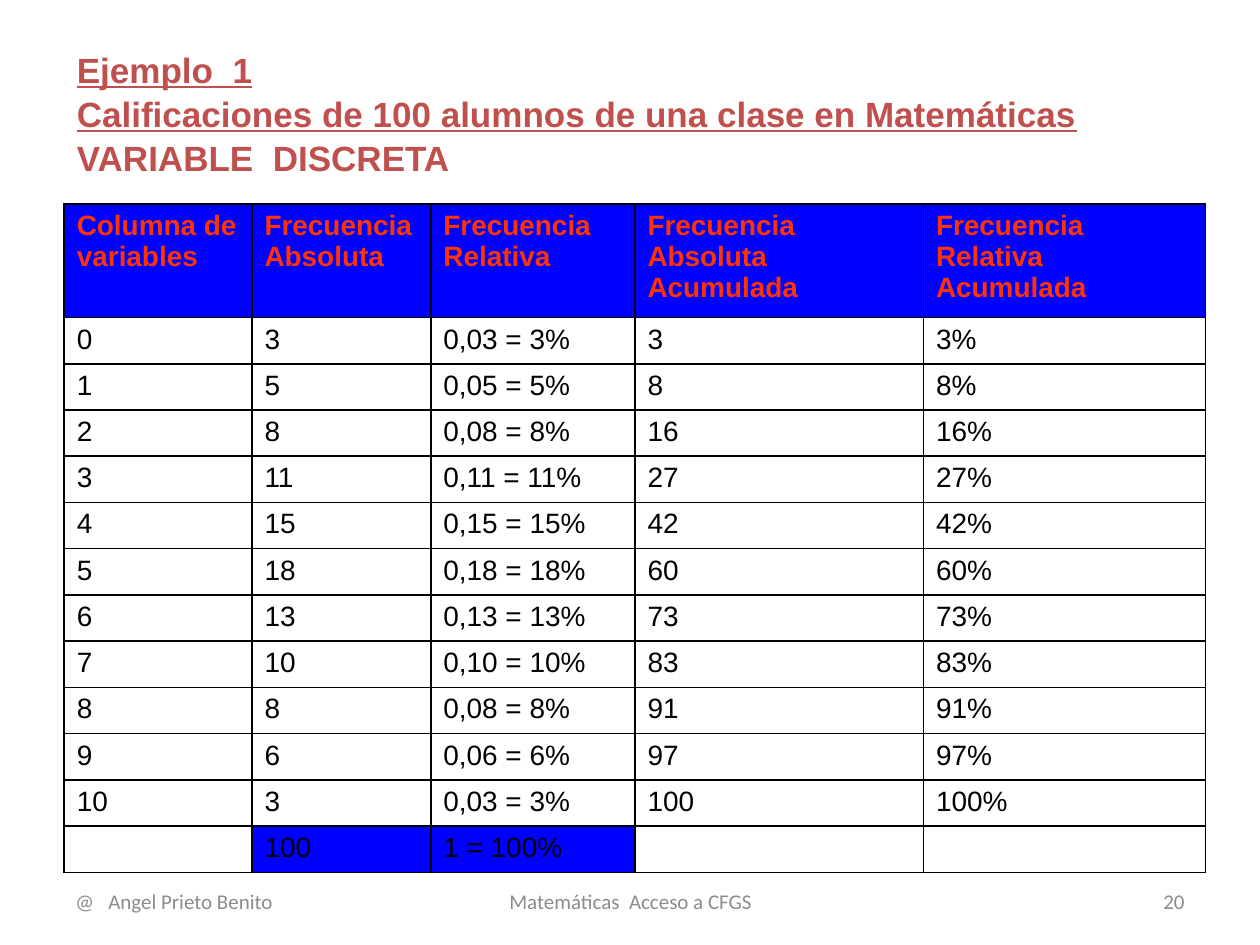
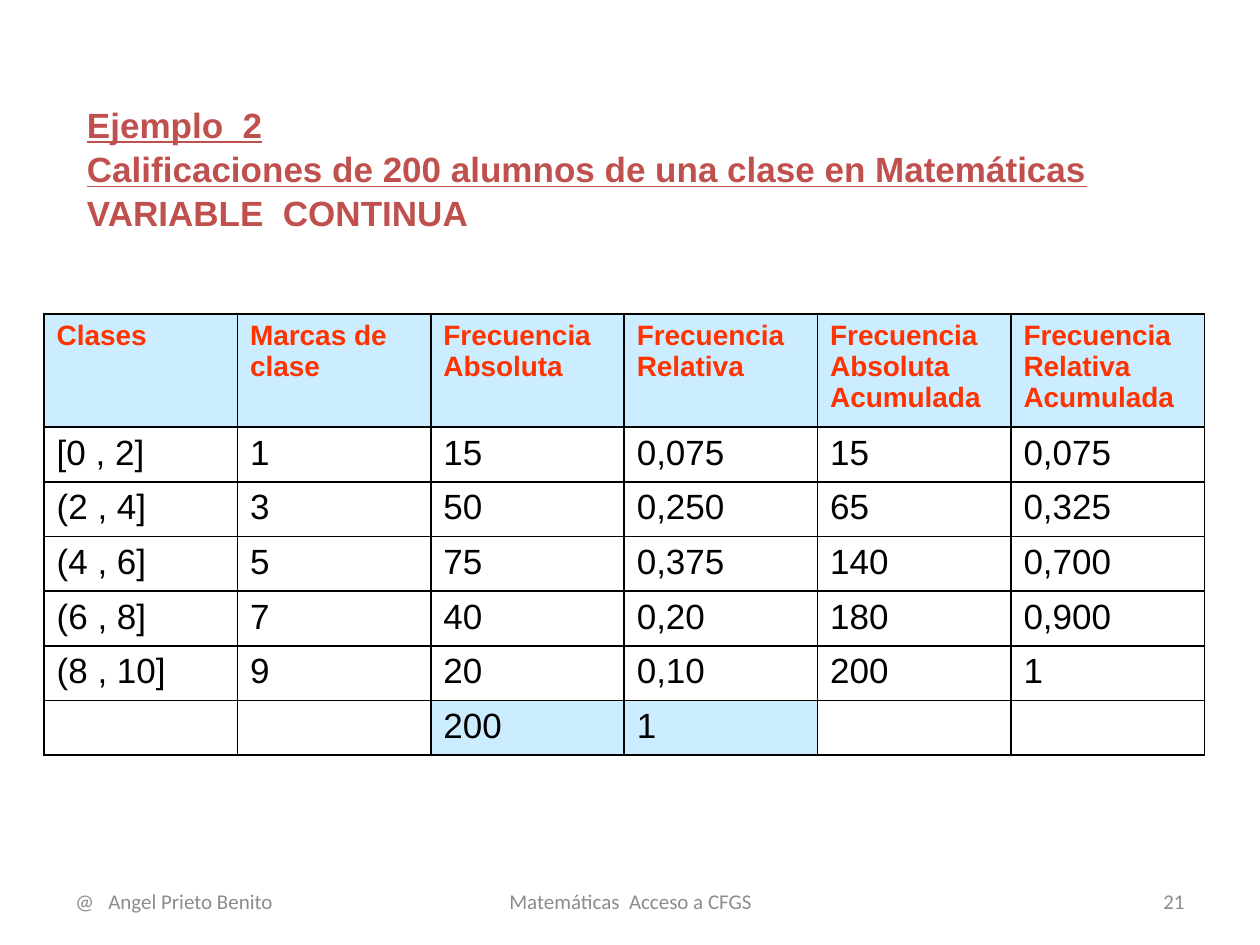
"""Builds two slides with frequency tables for a discrete and a continuous variable."""
import lxml.etree
import pptx
import pptx.dml.color
import pptx.enum.text
import pptx.oxml.ns
import pptx.util

Inches = pptx.util.Inches
Pt = pptx.util.Pt
Align = pptx.enum.text.PP_ALIGN
Anchor = pptx.enum.text.MSO_ANCHOR
AutoSize = pptx.enum.text.MSO_AUTO_SIZE
qn = pptx.oxml.ns.qn

COLORS = {
    "title": "C0504D", "footer": "8C8C8C", "header": "FF3300",
    "body": "000000", "border": "000000", "blue": "0000FF", "sky": "CCECFF",
}
TITLE_FORMAT = {"name": "Arial", "size": Pt(20), "bold": True}
FOOTER_FORMAT = {"name": "Calibri", "size": Pt(12)}
HEADER_FORMAT = {"name": "Arial", "size": Pt(16), "bold": True}
HEADER_HEIGHT = 0.9
FREQUENCIES = ["Frecuencia Absoluta", "Frecuencia Relativa",
               "Frecuencia Absoluta Acumulada", "Frecuencia Relativa Acumulada"]

EXAMPLES = [
    {
        "number": "20",
        "title": ["Ejemplo_1", "Calificaciones de 100 alumnos de una clase en Matemáticas",
                  "VARIABLE  DISCRETA"],
        "title_box": (0.51, 0.34, 8.98, 1.1),
        "table_box": (0.51, 1.62, 9.06, 5.3),
        "columns": [1.49, 1.42, 1.62, 2.29, 2.24],
        "accent": "blue",
        "body_size": 16,
        "rows": [
            ["Columna de variables"] + FREQUENCIES,
            ["0", "3", "0,03 = 3%", "3", "3%"],
            ["1", "5", "0,05 = 5%", "8", "8%"],
            ["2", "8", "0,08 = 8%", "16", "16%"],
            ["3", "11", "0,11 = 11%", "27", "27%"],
            ["4", "15", "0,15 = 15%", "42", "42%"],
            ["5", "18", "0,18 = 18%", "60", "60%"],
            ["6", "13", "0,13 = 13%", "73", "73%"],
            ["7", "10", "0,10 = 10%", "83", "83%"],
            ["8", "8", "0,08 = 8%", "91", "91%"],
            ["9", "6", "0,06 = 6%", "97", "97%"],
            ["10", "3", "0,03 = 3%", "100", "100%"],
            ["", "100", "1 = 100%", "", ""],
        ],
    },
    {
        "number": "21",
        "title": ["Ejemplo_2", "Calificaciones de 200 alumnos de una clase en Matemáticas",
                  "VARIABLE  CONTINUA"],
        "title_box": (0.59, 0.78, 8.82, 1.1),
        "table_box": (0.35, 2.49, 9.21, 3.5),
        "columns": [9.21 / 6] * 6,
        "accent": "sky",
        "body_size": 20,
        "rows": [
            ["Clases", "Marcas de clase"] + FREQUENCIES,
            ["[0 , 2]", "1", "15", "0,075", "15", "0,075"],
            ["(2 , 4]", "3", "50", "0,250", "65", "0,325"],
            ["(4 , 6]", "5", "75", "0,375", "140", "0,700"],
            ["(6 , 8]", "7", "40", "0,20", "180", "0,900"],
            ["(8 , 10]", "9", "20", "0,10", "200", "1"],
            ["", "", "200", "1", "", ""],
        ],
    },
]


def write(paragraph, text, color, format_values):
    run = paragraph.add_run()
    run.text = text
    for attribute, value in format_values.items():
        setattr(run.font, attribute, value)
    run.font.color.rgb = pptx.dml.color.RGBColor.from_string(COLORS[color])


def add_borders(cell):
    properties = cell._tc.get_or_add_tcPr()
    for side in ("lnL", "lnR", "lnT", "lnB"):
        line = lxml.etree.SubElement(properties, qn(f"a:{side}"), w=str(Pt(1)))
        fill = lxml.etree.SubElement(line, qn("a:solidFill"))
        lxml.etree.SubElement(fill, qn("a:srgbClr"), val=COLORS["border"])


presentation = pptx.Presentation()
presentation.slide_width = Inches(10)
presentation.slide_height = Inches(7.5)
title_only = presentation.slide_layouts[5]

for example in EXAMPLES:
    slide = presentation.slides.add_slide(title_only)

    footers = [
        (0.5, 2.33, "@   Angel Prieto Benito", Align.LEFT),
        (3.42, 3.17, "Matemáticas  Acceso a CFGS", Align.CENTER),
        (7.17, 2.33, example["number"], Align.RIGHT),
    ]
    for left, width, text, alignment in footers:
        shape = slide.shapes.add_textbox(Inches(left), Inches(6.95), Inches(width), Inches(0.4))
        shape.text_frame.word_wrap = True
        shape.text_frame.vertical_anchor = Anchor.MIDDLE
        paragraph = shape.text_frame.paragraphs[0]
        paragraph.alignment = alignment
        write(paragraph, text, "footer", FOOTER_FORMAT)

    title = slide.shapes.title
    for attribute, value in zip(("left", "top", "width", "height"), example["title_box"]):
        setattr(title, attribute, Inches(value))
    frame = title.text_frame
    frame.word_wrap = True
    frame.auto_size = AutoSize.SHAPE_TO_FIT_TEXT
    frame.vertical_anchor = Anchor.MIDDLE
    for index, text in enumerate(example["title"]):
        paragraph = frame.add_paragraph() if index else frame.paragraphs[0]
        paragraph.alignment = Align.LEFT
        paragraph.line_spacing = 1.05
        write(paragraph, text, "title", {**TITLE_FORMAT, "underline": index < 2})

    rows = example["rows"]
    table_box = [Inches(value) for value in example["table_box"]]
    table = slide.shapes.add_table(len(rows), len(rows[0]), *table_box).table
    table.first_row = False
    table.horz_banding = False
    for column, width in zip(table.columns, example["columns"]):
        column.width = Inches(width)
    body_height = (example["table_box"][3] - HEADER_HEIGHT) / (len(rows) - 1)
    body_format = {"name": "Arial", "size": Pt(example["body_size"]), "bold": False}

    for row_index, row in enumerate(rows):
        is_header = row_index == 0
        is_total = row_index == len(rows) - 1
        table.rows[row_index].height = Inches(HEADER_HEIGHT if is_header else body_height)
        for column_index, text in enumerate(row):
            cell = table.cell(row_index, column_index)
            add_borders(cell)
            if is_header or (is_total and text):
                cell.fill.solid()
                cell.fill.fore_color.rgb = pptx.dml.color.RGBColor.from_string(
                    COLORS[example["accent"]])
            else:
                cell.fill.background()
            paragraph = cell.text_frame.paragraphs[0]
            if is_header:
                write(paragraph, text, "header", HEADER_FORMAT)
            elif text:
                write(paragraph, text, "body", body_format)
            else:
                lxml.etree.SubElement(paragraph._p, qn("a:endParaRPr"),
                                      sz=str(example["body_size"] * 100))

presentation.save("out.pptx")
